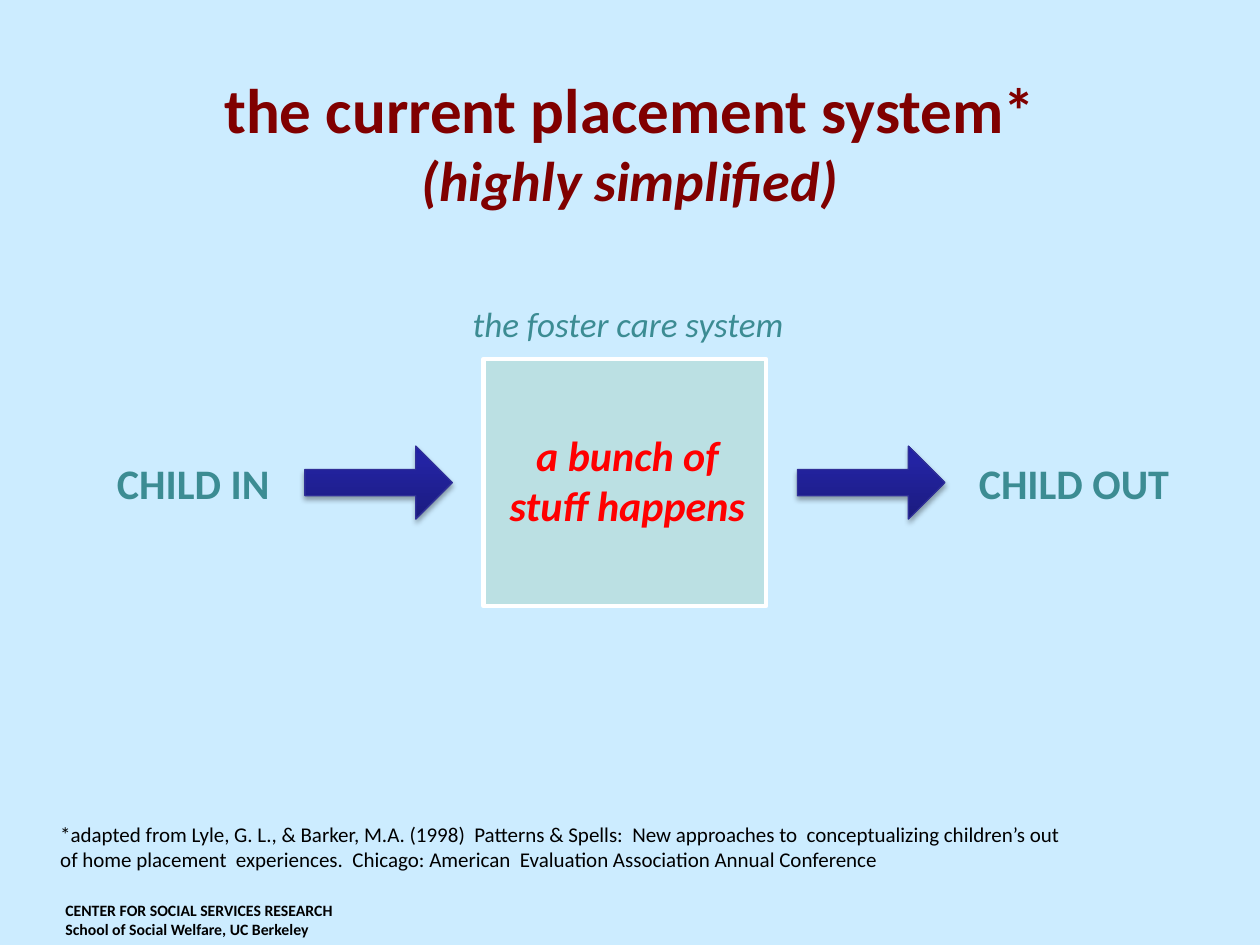
from copy import deepcopy
from dataclasses import dataclass, field

from lxml import etree
from pptx import Presentation
from pptx import util as u
from pptx.dml.color import RGBColor
from pptx.enum import shapes, text
from pptx.oxml.ns import qn


@dataclass(frozen=True)
class Theme:
    font: str = "Calibri"
    background: str = "CCECFF"
    title: str = "800000"
    label: str = "3C8C93"
    alert: str = "FF0000"
    body: str = "000000"
    system_fill: str = "BBE0E3"
    system_line: str = "FFFFFF"
    arrow_line: str = "2F2F98"
    arrow_stops: tuple = ((0, "1B1B7E"), (0.8, "2323A3"), (1, "2020A6"))
    title_size: int = 36
    subtitle_size: int = 32
    label_size: int = 24
    caption_size: int = 20
    note_size: int = 12
    footer_size: int = 9


THEME = Theme()


@dataclass(frozen=True)
class Area:
    left: float
    top: float
    width: float
    height: float

    def lengths(self) -> list:
        return [u.Inches(side) for side in (self.left, self.top, self.width, self.height)]


@dataclass(frozen=True)
class Line:
    words: str
    size: int
    formats: dict = field(default_factory=dict)


@dataclass(frozen=True)
class Label:
    area: Area
    color: str
    lines: tuple
    align: text.PP_ALIGN = text.PP_ALIGN.LEFT
    anchor: text.MSO_ANCHOR = text.MSO_ANCHOR.TOP
    wrap: bool = True


BOLD = {"bold": True}
ITALIC = {"italic": True}
CENTER = text.PP_ALIGN.CENTER

LABELS = (
    Label(Area(0.42, 7.1, 2.92, 0.4), THEME.body, (
        Line("CENTER FOR SOCIAL SERVICES RESEARCH", THEME.footer_size, BOLD),
        Line("School of Social Welfare, UC Berkeley", THEME.footer_size, BOLD))),
    Label(Area(0.5, 0.5, 9, 1.25), THEME.title, (
        Line("the current placement system*", THEME.title_size, BOLD),
        Line("(highly simplified)", THEME.subtitle_size, BOLD | ITALIC)),
        CENTER, text.MSO_ANCHOR.MIDDLE),
    Label(Area(0.38, 6.47, 8.17, 0.51), THEME.body, (
        Line("*adapted from Lyle, G. L., & Barker, M.A. (1998)  Patterns & Spells:  "
             "New approaches to  conceptualizing children’s out of home placement  "
             "experiences.  Chicago: American  Evaluation Association Annual Conference",
             THEME.note_size),)),
    Label(Area(0.83, 3.58, 1.42, 0.5), THEME.label,
          (Line("CHILD IN", THEME.label_size, BOLD),), wrap=False),
    Label(Area(7.67, 3.58, 1.73, 0.5), THEME.label,
          (Line("CHILD OUT", THEME.label_size, BOLD),), wrap=False),
    Label(Area(3.86, 3.36, 2.24, 0.91), THEME.alert,
          (Line("a bunch of stuff happens", THEME.label_size, BOLD | ITALIC),), CENTER),
    Label(Area(3.15, 2.35, 3.67, 0.44), THEME.label,
          (Line("the foster care system", THEME.caption_size, ITALIC),), CENTER),
)
SYSTEM_AREA = Area(3.84, 2.85, 2.24, 1.96)
ARROW_AREAS = tuple(Area(left, 3.54, 1.17, 0.58) for left in (2.42, 6.33))


def rgb(color: str) -> RGBColor:
    return RGBColor.from_string(color)


def draw_label(page, label: Label) -> None:
    box = page.shapes.add_textbox(*label.area.lengths())
    frame = box.text_frame
    frame.word_wrap = label.wrap
    frame.vertical_anchor = label.anchor
    para = frame.paragraphs[0]
    para.alignment = label.align
    for index, line in enumerate(label.lines):
        if index:
            para.add_line_break()
        span = para.add_run()
        span.text = line.words
        formats = {"name": THEME.font, "size": u.Pt(line.size)} | line.formats
        for name, value in formats.items():
            setattr(span.font, name, value)
        span.font.color.rgb = rgb(label.color)


def draw_shape(page, kind: shapes.MSO_SHAPE, area: Area, line_color: str, line_width: float):
    shape = page.shapes.add_shape(kind, *area.lengths())
    shape.shadow.inherit = False
    shape.line.color.rgb = rgb(line_color)
    shape.line.width = u.Pt(line_width)
    return shape


def draw_system(page) -> None:
    square = draw_shape(page, shapes.MSO_SHAPE.RECTANGLE, SYSTEM_AREA, THEME.system_line, 2.75)
    square.fill.solid()
    square.fill.fore_color.rgb = rgb(THEME.system_fill)


def add_shadow(shape) -> None:
    effects = shape._element.spPr.find(qn("a:effectLst"))
    shadow = etree.SubElement(effects, qn("a:outerShdw"), blurRad=str(u.Pt(3.1)),
                              dist=str(u.Pt(1.8)), dir="5400000", rotWithShape="0")
    color = etree.SubElement(shadow, qn("a:srgbClr"), val="000000")
    etree.SubElement(color, qn("a:alpha"), val="35000")


def draw_arrow(page, area: Area) -> None:
    arrow = draw_shape(page, shapes.MSO_SHAPE.RIGHT_ARROW, area, THEME.arrow_line, 0.75)
    arrow.adjustments[0] = 0.36
    arrow.adjustments[1] = 0.5
    arrow.fill.gradient()
    arrow.fill.gradient_angle = 90
    stop_list = arrow._element.spPr.find(f".//{qn('a:gsLst')}")
    stop_list.append(deepcopy(stop_list[-1]))
    for stop, (position, color) in zip(arrow.fill.gradient_stops, THEME.arrow_stops):
        stop.position = position
        stop.color.rgb = rgb(color)
    add_shadow(arrow)


def main() -> None:
    deck = Presentation()
    deck.slide_width, deck.slide_height = u.Inches(10), u.Inches(7.5)
    page = deck.slides.add_slide(deck.slide_layouts[6])
    page.background.fill.solid()
    page.background.fill.fore_color.rgb = rgb(THEME.background)
    draw_system(page)
    for area in ARROW_AREAS:
        draw_arrow(page, area)
    for label in LABELS:
        draw_label(page, label)
    deck.save("out.pptx")


if __name__ == "__main__":
    main()
